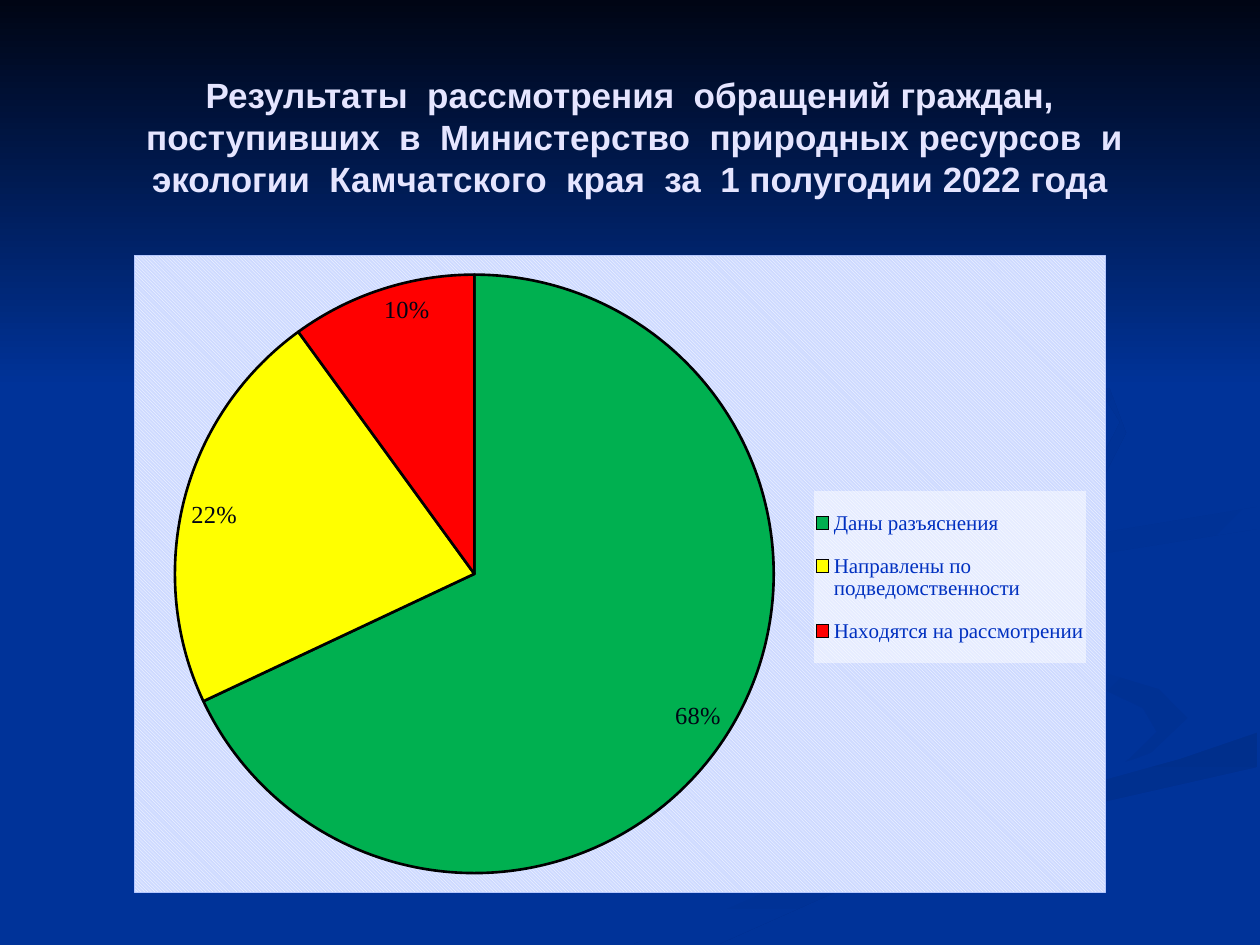
"""Build a slide with a pie chart of how citizens' appeals were resolved."""
from dataclasses import dataclass

from pptx import Presentation
from pptx.chart.data import CategoryChartData
from pptx.dml.color import RGBColor
from pptx.enum.chart import XL_CHART_TYPE, XL_LABEL_POSITION, XL_LEGEND_POSITION
from pptx.enum.shapes import MSO_SHAPE
from pptx.enum.text import MSO_ANCHOR, PP_ALIGN
from pptx.oxml import parse_xml
from pptx.oxml.ns import nsdecls
from pptx.util import Emu, Pt

PIE = XL_CHART_TYPE.PIE
INSIDE_END = XL_LABEL_POSITION.INSIDE_END
RIGHT = XL_LEGEND_POSITION.RIGHT
RECTANGLE = MSO_SHAPE.RECTANGLE
MIDDLE = MSO_ANCHOR.MIDDLE
CENTER = PP_ALIGN.CENTER

EMU_PER_PX = 914400 / 126
SERIF = "Times New Roman"
COLORS = {
    "blue": "003399", "shade": "003193", "deep": "002F8C", "night": "000514",
    "title": "E5E5FF", "legend": "0030C0", "white": "FFFFFF", "black": "000000",
    "panel": "CEDAFF", "border": "B5C8FF",
    "green": "00B050", "yellow": "FFFF00", "red": "FF0000",
}


@dataclass
class Swirl:
    start: str
    end: str
    angle: int
    points: list[tuple[int, int]]


@dataclass
class Slice:
    label: str
    share: float
    color: str


SWIRLS = [
    Swirl("blue", "shade", 0, [
        (984, 697), (789, 633), (725, 578), (770, 629), (960, 689), (983, 729),
        (679, 818), (378, 944), (455, 944), (711, 838), (983, 762), (1008, 732)]),
    Swirl("blue", "shade", 315, [
        (1188, 718), (1158, 689), (975, 634), (912, 585), (951, 636), (1109, 692),
        (1143, 708), (1157, 732), (1126, 762), (1166, 747)]),
    Swirl("deep", "blue", 270, [
        (634, 944), (719, 944), (910, 859), (1085, 806), (1257, 767), (1257, 732),
        (1179, 759), (963, 815)]),
    Swirl("blue", "blue", 0, [
        (914, 585), (977, 634), (1159, 689), (1188, 718), (1148, 756), (887, 825),
        (601, 944), (654, 941), (877, 843), (1180, 759), (1259, 732), (1259, 678),
        (1048, 627), (984, 583), (1071, 538), (1259, 507), (1259, 488), (970, 538)]),
    Swirl("shade", "blue", 315, [
        (984, 580), (1041, 625), (1016, 590), (1106, 553), (1257, 529), (1257, 507),
        (1070, 538)]),
    Swirl("deep", "blue", 315, [
        (861, 542), (1040, 507), (1104, 476), (1126, 433), (1109, 387), (960, 294),
        (1092, 377), (1120, 422), (1104, 454), (1031, 486), (775, 541), (728, 575),
        (784, 630), (748, 598), (773, 564)]),
]
SLICES = [
    Slice("Даны разъяснения", 0.68, "green"),
    Slice("Направлены по подведомственности", 0.22, "yellow"),
    Slice("Находятся на рассмотрении", 0.1, "red"),
]
TITLE = ("Результаты  рассмотрения  обращений граждан,\v поступивших  в  Министерство  "
         "природных ресурсов  и экологии  Камчатского  края  за  1 полугодии 2022 года")


def px(n: int) -> Emu:
    return Emu(round(n * EMU_PER_PX))


def rgb(name: str) -> RGBColor:
    return RGBColor.from_string(COLORS[name])


def style_font(font, size: int, color: str, name: str = SERIF) -> None:
    font.size, font.name = Pt(size), name
    font.color.rgb = rgb(color)


def paint_gradient(sp, start: str, end: str, angle: int) -> None:
    sp.shadow.inherit = False
    sp.line.fill.background()
    sp.fill.gradient()
    sp.fill.gradient_angle = angle
    for stop, color, position in zip(sp.fill.gradient_stops, (start, end), (0, 1)):
        stop.color.rgb = rgb(color)
        stop.position = position


def draw_swirl(slide, swirl: Swirl) -> None:
    builder = slide.shapes.build_freeform(*swirl.points[0], scale=EMU_PER_PX)
    builder.add_line_segments(swirl.points[1:], close=True)
    paint_gradient(builder.convert_to_shape(), swirl.start, swirl.end, swirl.angle)


def layout_xml(x: float, y: float, w: float, h: float, inner: bool = False):
    target = '<c:layoutTarget val="inner"/>' if inner else ""
    modes = '<c:xMode val="edge"/><c:yMode val="edge"/>'
    sizes = "".join(f'<c:{k} val="{v}"/>' for k, v in zip("xywh", (x, y, w, h)))
    return parse_xml(f'<c:layout {nsdecls("c")}><c:manualLayout>{target}{modes}{sizes}'
                     '</c:manualLayout></c:layout>')


def area_xml(body: str):
    return parse_xml(f'<c:spPr {nsdecls("c", "a")}>{body}</c:spPr>')


def color_xml(name: str, inner: str = "") -> str:
    return f'<a:srgbClr val="{COLORS[name]}">{inner}</a:srgbClr>'


def add_title(slide) -> None:
    sp = slide.shapes.title
    sp.left, sp.top, sp.width, sp.height = px(63), px(38), px(1134), px(197)
    slide.shapes._spTree.append(sp._element)
    tf = sp.text_frame
    tf.text = TITLE
    tf.word_wrap = True
    tf.vertical_anchor = MIDDLE
    p = tf.paragraphs[0]
    p.alignment = CENTER
    for r in p.runs:
        style_font(r.font, 20, "title", "Arial")
        r.font.bold = True


def add_pie(slide) -> None:
    data = CategoryChartData(number_format="0%")
    data.categories = [s.label for s in SLICES]
    data.add_series("Series 1", [s.share for s in SLICES])
    chart = slide.shapes.add_chart(PIE, px(134), px(255), px(972), px(638), data).chart
    chart.has_title = False
    style_font(chart.font, 10, "white")
    chart._chartSpace.chart.addnext(area_xml(
        f'<a:pattFill prst="dkDnDiag"><a:fgClr>{color_xml("white")}</a:fgClr>'
        f'<a:bgClr>{color_xml("panel")}</a:bgClr></a:pattFill>'
        f'<a:ln w="9525"><a:solidFill>{color_xml("border")}</a:solidFill></a:ln>'))

    plot_area = chart._chartSpace.chart.plotArea
    for old in plot_area.findall("{*}layout"):
        plot_area.remove(old)
    plot_area.insert(0, layout_xml(0.04, 0.03, 0.62, 0.94, inner=True))

    plot = chart.plots[0]
    plot.vary_by_categories = True
    for i, s in enumerate(SLICES):
        fmt = plot.series[0].points[i].format
        fmt.fill.solid()
        fmt.fill.fore_color.rgb = rgb(s.color)
        fmt.line.color.rgb = rgb("black")
        fmt.line.width = Pt(1.5)
    plot.has_data_labels = True
    labels = plot.data_labels
    labels.show_value, labels.show_percentage = True, False
    labels.number_format, labels.number_format_is_linked = "0%", False
    labels.position = INSIDE_END
    style_font(labels.font, 14, "night")

    chart.has_legend = True
    legend = chart.legend
    legend.position = RIGHT
    legend.include_in_layout = False
    style_font(legend.font, 12, "legend")
    overlay = legend._element.find("{*}overlay")
    for old in legend._element.findall("{*}layout"):
        legend._element.remove(old)
    overlay.addprevious(layout_xml(0.7, 0.37, 0.28, 0.27))
    half = color_xml("white", '<a:alpha val="50000"/>')
    overlay.addnext(area_xml(f"<a:solidFill>{half}</a:solidFill><a:ln><a:noFill/></a:ln>"))


def main() -> None:
    prs = Presentation()
    prs.slide_width, prs.slide_height = px(1260), px(945)
    slide = prs.slides.add_slide(prs.slide_layouts[5])
    slide.background.fill.solid()
    slide.background.fill.fore_color.rgb = rgb("blue")
    for swirl in SWIRLS:
        draw_swirl(slide, swirl)
    sky = slide.shapes.add_shape(RECTANGLE, 0, 0, px(1260), px(388))
    paint_gradient(sky, "night", "blue", 270)
    add_title(slide)
    add_pie(slide)
    prs.save("out.pptx")


if __name__ == "__main__":
    main()
